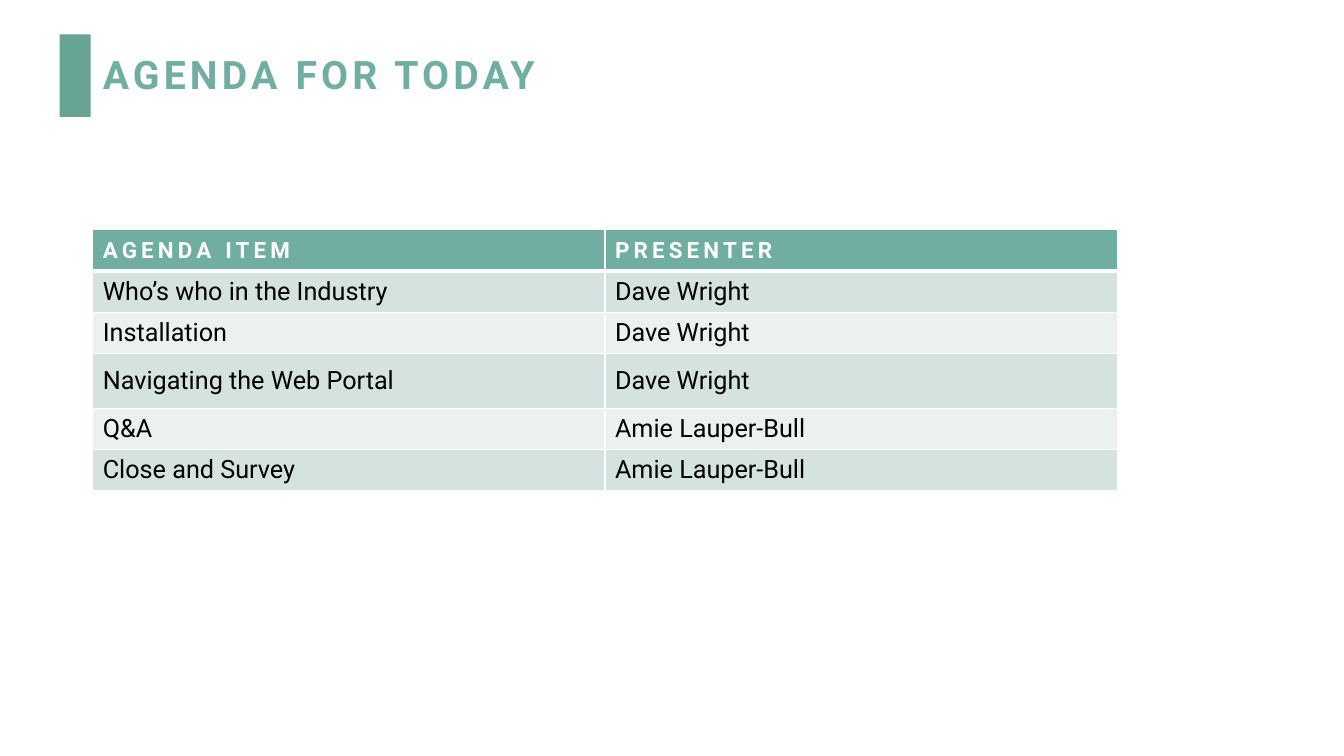
from dataclasses import dataclass

from lxml import etree
from pptx import Presentation
from pptx import util as u
from pptx.dml import color
from pptx.enum import shapes, text
from pptx.oxml import ns

PX = 9144  # EMU per px, at 100 px to the inch


@dataclass(frozen=True)
class Theme:
    font: str = "Roboto"
    accent: str = "70ADA3"
    marker: str = "68A495"
    band_dark: str = "D5E3E0"
    band_light: str = "EBF1F0"
    white: str = "FFFFFF"
    black: str = "000000"
    title_size: int = 28
    header_size: int = 16
    body_size: int = 18
    tracking: int = 3


class AgendaSlide:
    def __init__(self, deck, theme):
        self.theme = theme
        self.slide = deck.slides.add_slide(deck.slide_layouts[5])

    def add_run(self, frame, wording, size, ink, bold=False, tracking=0):
        """Add one run to the first paragraph; tracking is in points."""
        paragraph = frame.paragraphs[0]
        paragraph.alignment = text.PP_ALIGN.LEFT
        run = paragraph.add_run()
        run.text = wording
        run.font.name = self.theme.font
        run.font.size = u.Pt(size)
        run.font.bold = bold
        run.font.color.rgb = color.RGBColor.from_string(ink)
        run._r.get_or_add_rPr().set("spc", str(tracking * 100))
        return paragraph

    def title(self, wording, left, top, width, height):
        heading = self.slide.shapes.title
        heading.left, heading.top = left * PX, top * PX
        heading.width, heading.height = width * PX, height * PX
        frame = heading.text_frame
        frame.word_wrap = True
        frame.auto_size = text.MSO_AUTO_SIZE.NONE
        frame.vertical_anchor = text.MSO_ANCHOR.MIDDLE
        paragraph = self.add_run(frame, wording, self.theme.title_size,
                                 self.theme.accent, True, self.theme.tracking)
        paragraph.line_spacing = 0.9

    def marker(self, left, top, width, height):
        bar = self.slide.shapes.add_shape(
            shapes.MSO_SHAPE.RECTANGLE,
            left * PX, top * PX, width * PX, height * PX)
        bar.shadow.inherit = False
        bar.fill.solid()
        bar.fill.fore_color.rgb = color.RGBColor.from_string(self.theme.marker)
        bar.line.fill.background()

    def borders(self, cell, **points):
        """Draw white cell borders; points maps L, R, T, B to line widths."""
        properties = cell._tc.get_or_add_tcPr()
        for side, width in points.items():
            line = etree.SubElement(properties, ns.qn(f"a:ln{side}"),
                                    w=str(u.Pt(width)))
            fill = etree.SubElement(line, ns.qn("a:solidFill"))
            etree.SubElement(fill, ns.qn("a:srgbClr"), val=self.theme.white)

    def table(self, rows, left, top, column_width, row_heights):
        """Draw a banded table whose first row is the header."""
        theme = self.theme
        columns = len(rows[0])
        grid = self.slide.shapes.add_table(
            len(rows), columns, left * PX, top * PX,
            columns * column_width * PX, sum(row_heights) * PX).table
        for column in grid.columns:
            column.width = column_width * PX
        for index, (entries, height) in enumerate(zip(rows, row_heights)):
            grid.rows[index].height = height * PX
            is_header = index == 0
            if is_header:
                band = theme.accent
                style = (theme.header_size, theme.white, True, theme.tracking)
            else:
                band = theme.band_dark if index % 2 else theme.band_light
                style = (theme.body_size, theme.black)
            for position, entry in enumerate(entries):
                cell = grid.cell(index, position)
                cell.vertical_anchor = text.MSO_ANCHOR.MIDDLE
                self.borders(cell, L=1, R=1, T=3 if index == 1 else 1,
                             B=3 if is_header else 1)
                cell.fill.solid()
                cell.fill.fore_color.rgb = color.RGBColor.from_string(band)
                self.add_run(cell.text_frame, entry, *style)


def main():
    deck = Presentation()
    deck.slide_width, deck.slide_height = 1333 * PX, 750 * PX

    agenda = AgendaSlide(deck, Theme())
    agenda.marker(59, 34, 31, 82)
    agenda.title("AGENDA FOR TODAY", 92, 40, 1015, 72)
    agenda.table(
        [
            ("AGENDA ITEM", "PRESENTER"),
            ("Who’s who in the Industry", "Dave Wright"),
            ("Installation", "Dave Wright"),
            ("Navigating the Web Portal", "Dave Wright"),
            ("Q&A", "Amie Lauper-Bull"),
            ("Close and Survey", "Amie Lauper-Bull"),
        ],
        left=92, top=228, column_width=508,
        row_heights=[41, 41, 41, 54, 41, 41],
    )
    deck.save("out.pptx")


if __name__ == "__main__":
    main()
